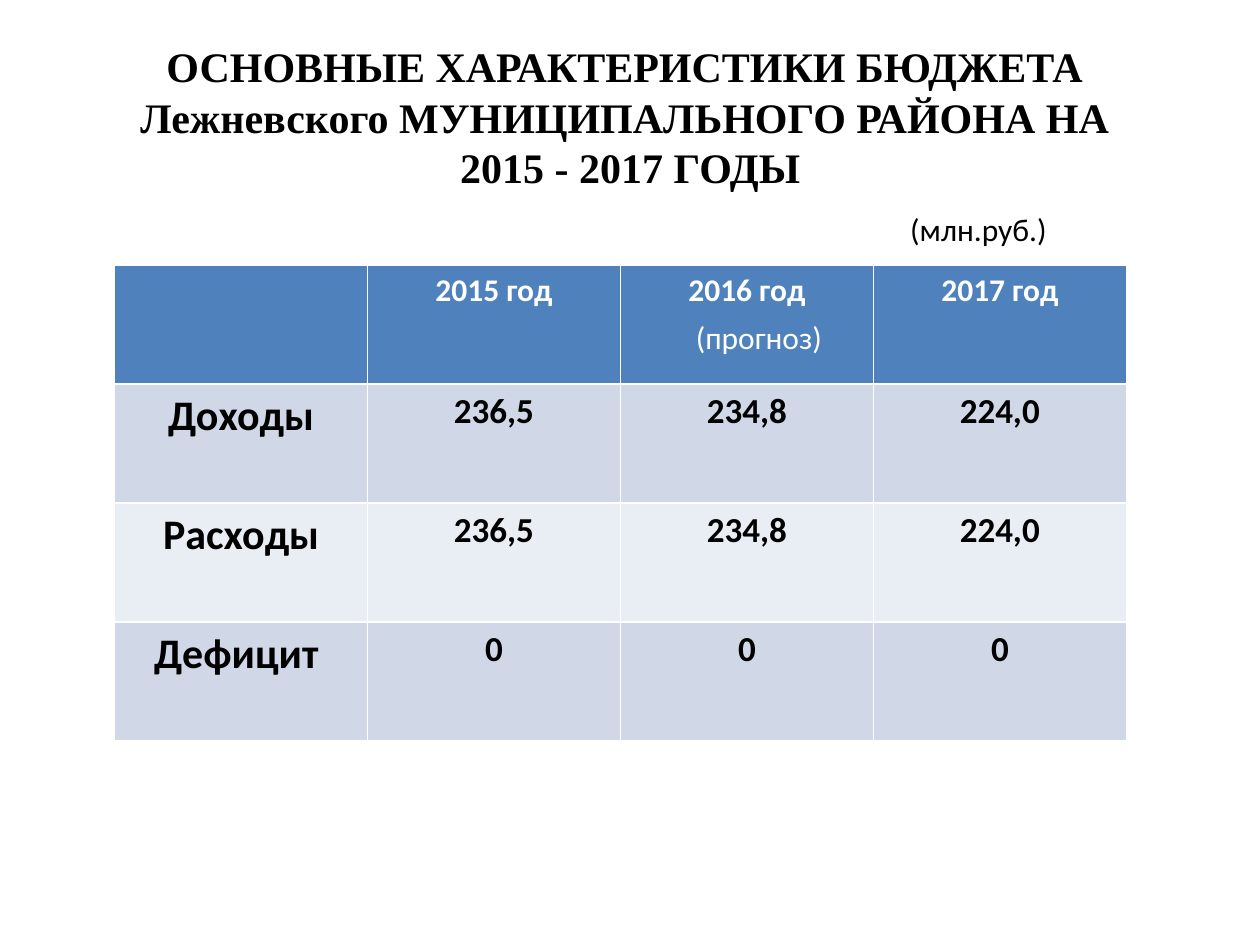
from pptx import Presentation
from pptx.dml.color import RGBColor as RGB
from pptx.enum.text import MSO_ANCHOR as Anchor, PP_ALIGN as Align
from pptx.util import Cm, Pt

COLORS = {
    "text": "000000",
    "light": "FFFFFF",
    "head": "4F81BD",
    "odd": "D0D8E8",
    "even": "E9EDF4",
}
TITLE = (
    "ОСНОВНЫЕ ХАРАКТЕРИСТИКИ БЮДЖЕТА \v"
    "Лежневского МУНИЦИПАЛЬНОГО РАЙОНА НА \v"
    "2015 - 2017 ГОДЫ"
)
ROWS = [
    ["", "2015 год", "2016 год", "2017 год"],
    ["Доходы", "236,5", "234,8", "224,0"],
    ["Расходы", "236,5", "234,8", "224,0"],
    ["Дефицит ", "0", "0", "0"],
]


def color(name):
    return RGB.from_string(COLORS[name])


def write(frame, text, size, ink="text", bold=False, align=Align.CENTER, face="Calibri"):
    frame.text = text
    par = frame.paragraphs[0]
    par.alignment = align
    for run in par.runs:
        font = run.font
        font.name, font.size, font.bold = face, Pt(size), bold
        font.color.rgb = color(ink)


def add_title(slide):
    title = slide.shapes.title
    title.left, title.top = Cm(1.27), Cm(0.76)
    title.width, title.height = Cm(22.86), Cm(3.18)
    title.text_frame.vertical_anchor = Anchor.MIDDLE
    write(title.text_frame, TITLE, 24, bold=True, face="Times New Roman")


def add_budget(slide):
    table = slide.shapes.add_table(
        len(ROWS), len(ROWS[0]), Cm(2.31), Cm(5.34), Cm(20.4), Cm(9.6)
    ).table
    for r, row in enumerate(ROWS):
        band = "head" if r == 0 else "odd" if r % 2 else "even"
        ink = "text" if r else "light"
        for c, text in enumerate(row):
            cell = table.cell(r, c)
            cell.fill.solid()
            cell.fill.fore_color.rgb = color(band)
            size = 18 if r == 0 else 20 if c else 24
            write(cell.text_frame, text, size, ink, bold=True)


def add_label(slide, text, left, top, width, ink, align):
    box = slide.shapes.add_textbox(Cm(left), Cm(top), Cm(width), Cm(1.02))
    box.text_frame.word_wrap = True
    write(box.text_frame, text, 18, ink, align=align)


def main():
    deck = Presentation()
    deck.slide_width, deck.slide_height = Cm(25.4), Cm(19.05)
    slide = deck.slides.add_slide(deck.slide_layouts[5])
    add_title(slide)
    add_budget(slide)
    add_label(slide, "(млн.руб.)", 18.1, 4.11, 4.6, "text", Align.LEFT)
    add_label(slide, "(прогноз)", 13.3, 6.28, 4, "light", Align.CENTER)
    deck.save("out.pptx")


if __name__ == "__main__":
    main()
